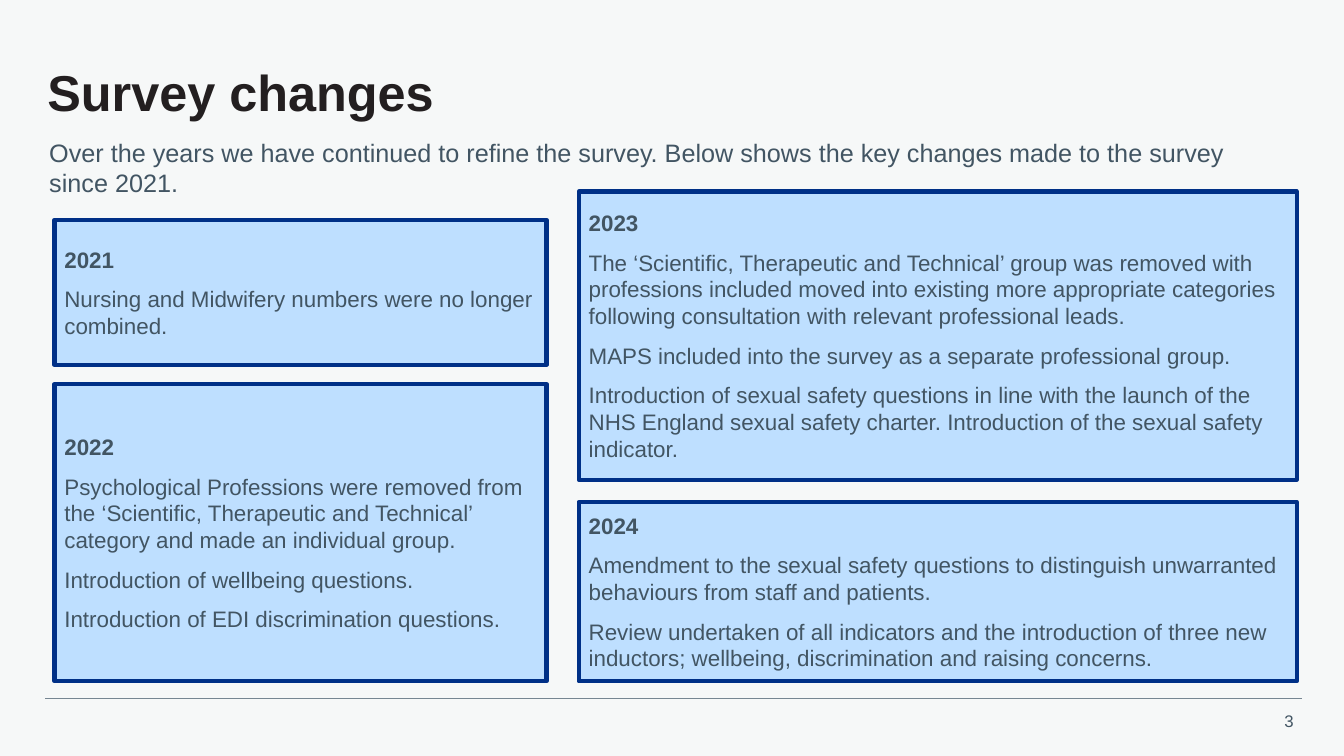
from lxml import etree
from pptx import Presentation, util as u
from pptx.dml.color import RGBColor
from pptx.enum import shapes, text
from pptx.oxml.ns import qn

PAPER = RGBColor(0xF6, 0xF8, 0xF8)
INK = RGBColor(0x23, 0x1F, 0x20)
SLATE = RGBColor(0x42, 0x55, 0x63)
RULE = RGBColor(0x76, 0x86, 0x92)
PALE_BLUE = RGBColor(0xBE, 0xDF, 0xFF)
NAVY = RGBColor(0x00, 0x30, 0x87)

# Survey years: (left, top, width, height), year, changes
CHANGES = [
    ((0.54, 2.18, 4.88, 1.44), "2021", [
        "Nursing and Midwifery numbers were no longer combined.",
    ]),
    ((0.54, 3.81, 4.88, 2.95), "2022", [
        "Psychological Professions were removed from the ‘Scientific, Therapeutic "
        "and Technical’ category and made an individual group.",
        "Introduction of wellbeing questions.",
        "Introduction of EDI discrimination questions.",
    ]),
    ((5.74, 1.9, 7.12, 2.86), "2023", [
        "The ‘Scientific, Therapeutic and Technical’ group was removed with "
        "professions included moved into existing more appropriate categories "
        "following consultation with relevant professional leads.",
        "MAPS included into the survey as a separate professional group.",
        "Introduction of sexual safety questions in line with the launch of the "
        "NHS England sexual safety charter. Introduction of the sexual safety indicator.",
    ]),
    ((5.74, 4.98, 7.12, 1.78), "2024", [
        "Amendment to the sexual safety questions to distinguish unwarranted "
        "behaviours from staff and patients.",
        "Review undertaken of all indicators and the introduction of three new "
        "inductors; wellbeing, discrimination and raising concerns.",
    ]),
]


def write(para, words, size=16, color=SLATE, bold=False, after=0, spacing=1.0,
          align=text.PP_ALIGN.LEFT, font="Arial"):
    """Add formatted words to a paragraph."""
    para.alignment = align
    para.space_after = u.Pt(after)
    para.line_spacing = spacing
    span = para.add_run()
    span.text = words
    span.font.name = font
    span.font.size = u.Pt(size)
    span.font.bold = bold
    span.font.color.rgb = color


class SurveySlide:
    def __init__(self, deck):
        self.page = deck.slides.add_slide(deck.slide_layouts[6])
        background = self.page.background.fill
        background.solid()
        background.fore_color.rgb = PAPER

    def label(self, place, words, inset=None, anchor=text.MSO_ANCHOR.TOP, **style):
        box = self.page.shapes.add_textbox(*map(u.Inches, place))
        frame = box.text_frame
        frame.word_wrap = True
        frame.vertical_anchor = anchor
        if inset is not None:
            frame.margin_left = frame.margin_right = u.Inches(inset)
            frame.margin_top = frame.margin_bottom = u.Inches(inset)
        write(frame.paragraphs[0], words, **style)

    def card(self, place, year, changes):
        box = self.page.shapes.add_shape(shapes.MSO_SHAPE.RECTANGLE, *map(u.Inches, place))
        box.shadow.inherit = False
        box.fill.solid()
        box.fill.fore_color.rgb = PALE_BLUE
        box.line.color.rgb = NAVY
        box.line.width = u.Pt(3)
        frame = box.text_frame
        frame.word_wrap = True
        frame.vertical_anchor = text.MSO_ANCHOR.MIDDLE
        write(frame.paragraphs[0], year, bold=True, after=9)
        for change in changes:
            write(frame.add_paragraph(), change, after=9)

    def rule(self, left, right, top):
        line = self.page.shapes.add_connector(
            shapes.MSO_CONNECTOR.STRAIGHT, *map(u.Inches, (left, top, right, top)))
        line.line.color.rgb = RULE
        line.line.width = u.Pt(0.5)
        etree.SubElement(line._element.spPr, qn("a:effectLst"))


def main():
    deck = Presentation()
    deck.slide_width = u.Inches(13.33)
    deck.slide_height = u.Inches(7.5)
    slide = SurveySlide(deck)

    # Footer
    slide.label((12.52, 7, 0.41, 0.3), "3", size=12, align=text.PP_ALIGN.RIGHT)
    slide.rule(0.45, 12.91, 6.93)

    # Heading and introduction
    slide.label((0.47, 0.47, 12.47, 0.95), "Survey changes", inset=0,
                anchor=text.MSO_ANCHOR.MIDDLE, size=36, color=INK, bold=True, spacing=0.9)
    slide.label((0.39, 1.31, 12.47, 0.71),
                "Over the years we have continued to refine the survey. Below shows "
                "the key changes made to the survey since 2021.", size=18, after=14)

    # One card per survey year
    for place, year, changes in CHANGES:
        slide.card(place, year, changes)

    deck.save("out.pptx")


if __name__ == "__main__":
    main()
